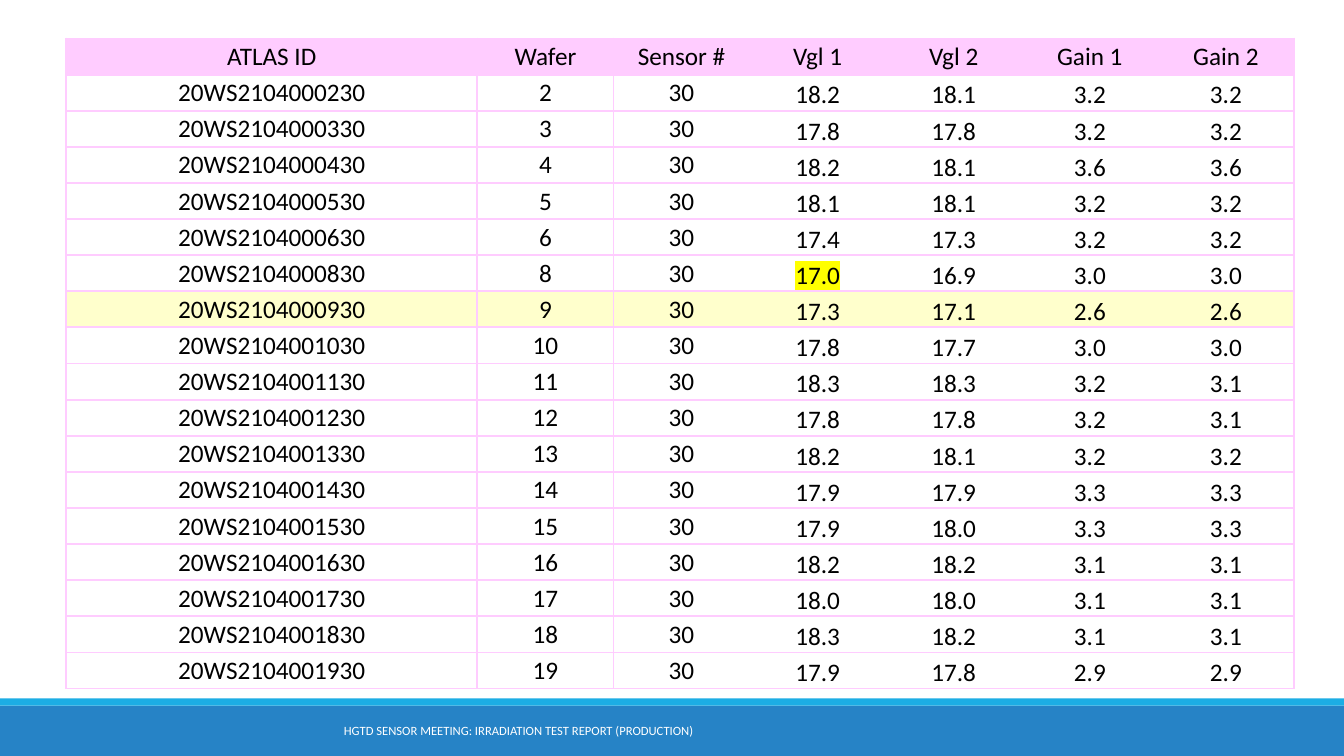
from lxml import etree
from pptx import Presentation
from pptx.dml.color import RGBColor
from pptx.enum import shapes, text
from pptx.oxml.ns import qn
from pptx.util import Cm, Pt

FOOTER = "HGTD SENSOR MEETING: IRRADIATION TEST REPORT (PRODUCTION)"
HEADERS = ["ATLAS ID", "Wafer", "Sensor #", "Vgl 1", "Vgl 2", "Gain 1", "Gain 2"]
SENSOR = "30"
MEASUREMENTS = [
    (2, "18.2", "18.1", "3.2", "3.2"),
    (3, "17.8", "17.8", "3.2", "3.2"),
    (4, "18.2", "18.1", "3.6", "3.6"),
    (5, "18.1", "18.1", "3.2", "3.2"),
    (6, "17.4", "17.3", "3.2", "3.2"),
    (8, "17.0", "16.9", "3.0", "3.0"),
    (9, "17.3", "17.1", "2.6", "2.6"),
    (10, "17.8", "17.7", "3.0", "3.0"),
    (11, "18.3", "18.3", "3.2", "3.1"),
    (12, "17.8", "17.8", "3.2", "3.1"),
    (13, "18.2", "18.1", "3.2", "3.2"),
    (14, "17.9", "17.9", "3.3", "3.3"),
    (15, "17.9", "18.0", "3.3", "3.3"),
    (16, "18.2", "18.2", "3.1", "3.1"),
    (17, "18.0", "18.0", "3.1", "3.1"),
    (18, "18.3", "18.2", "3.1", "3.1"),
    (19, "17.9", "17.8", "2.9", "2.9"),
]
MARKED_WAFER = "9"
MARKED_VALUE = ("8", "Vgl 1")
COLORS = {
    "bar": "2683C6", "stripe": "1CADE4", "pink": "FFCCFF", "cream": "FFFFCC",
    "marker": "FFFF00", "black": "000000", "white": "FFFFFF",
}
NO_STYLE = "{2D5ABB26-0587-4C30-8999-92F81FD0307C}"
ID_WIDTH, VALUE_WIDTH, ROW_HEIGHT = 10.36, 3.43, 0.91
BARS = [(17.78, 1.27, "bar"), (17.6, 0.18, "stripe")]


def write_text(frame, content, size=18, color="black", highlight=None):
    paragraph = frame.paragraphs[0]
    paragraph.alignment = text.PP_ALIGN.CENTER
    run = paragraph.add_run()
    run.text = content
    run.font.size = Pt(size)
    run.font.color.rgb = RGBColor.from_string(COLORS[color])
    if highlight:
        marker = etree.SubElement(run.font._element, qn("a:highlight"))
        etree.SubElement(marker, qn("a:srgbClr"), val=COLORS[highlight])
    run.font.name = "Calibri"


def set_borders(cell, sides):
    properties = cell._tc.get_or_add_tcPr()
    for side in "LRTB":
        if side in sides:
            line = etree.SubElement(properties, qn(f"a:ln{side}"), w=str(Pt(1.5)))
            fill = etree.SubElement(line, qn("a:solidFill"))
            etree.SubElement(fill, qn("a:srgbClr"), val=COLORS["pink"])


def set_fill(target, color):
    target.fill.solid()
    target.fill.fore_color.rgb = RGBColor.from_string(COLORS[color])


def add_footer(slide, width):
    for top, height, color in BARS:
        bar = slide.shapes.add_shape(
            shapes.MSO_SHAPE.RECTANGLE, 0, Cm(top), width, Cm(height))
        bar.shadow.inherit = False
        set_fill(bar, color)
        bar.line.fill.background()
    box = slide.shapes.add_textbox(Cm(3.07), Cm(17.91), Cm(19.99), Cm(1.02))
    box.text_frame.word_wrap = True
    box.text_frame.vertical_anchor = text.MSO_ANCHOR.MIDDLE
    write_text(box.text_frame, FOOTER, size=9, color="white")


def add_measurements(slide):
    rows = [HEADERS] + [
        [f"20WS2104{wafer:04d}{SENSOR}", str(wafer), SENSOR, *values]
        for wafer, *values in MEASUREMENTS
    ]
    widths = [ID_WIDTH] + [VALUE_WIDTH] * (len(HEADERS) - 1)
    frame = slide.shapes.add_table(
        len(rows), len(HEADERS), Cm(1.67), Cm(0.97),
        Cm(sum(widths)), Cm(ROW_HEIGHT * len(rows)))
    table = frame.table
    table._tbl.tblPr.find(qn("a:tableStyleId")).text = NO_STYLE
    table.horz_banding = False
    for column, width in zip(table.columns, widths):
        column.width = Cm(width)
    for row_index, row in enumerate(rows):
        table.rows[row_index].height = Cm(ROW_HEIGHT)
        for column_index, content in enumerate(row):
            cell = table.cell(row_index, column_index)
            cell.margin_left = cell.margin_right = cell.margin_top = Cm(0.02)
            cell.margin_bottom = 0
            measured = row_index > 0 and column_index > 2
            cell.vertical_anchor = (
                text.MSO_ANCHOR.BOTTOM if measured else text.MSO_ANCHOR.MIDDLE)
            sides = {0: "LRTB", 1: "LTB", len(row) - 1: "RTB"}
            set_borders(cell, sides.get(column_index, "TB"))
            if row_index == 0:
                set_fill(cell, "pink")
            elif row[1] == MARKED_WAFER:
                set_fill(cell, "cream")
            else:
                cell.fill.background()
            marked = (row[1], HEADERS[column_index]) == MARKED_VALUE
            write_text(cell.text_frame, content,
                       highlight="marker" if marked else None)


def main():
    presentation = Presentation()
    presentation.slide_width, presentation.slide_height = Cm(33.87), Cm(19.05)
    slide = presentation.slides.add_slide(presentation.slide_layouts[6])
    add_footer(slide, presentation.slide_width)
    add_measurements(slide)
    presentation.save("out.pptx")


if __name__ == "__main__":
    main()
